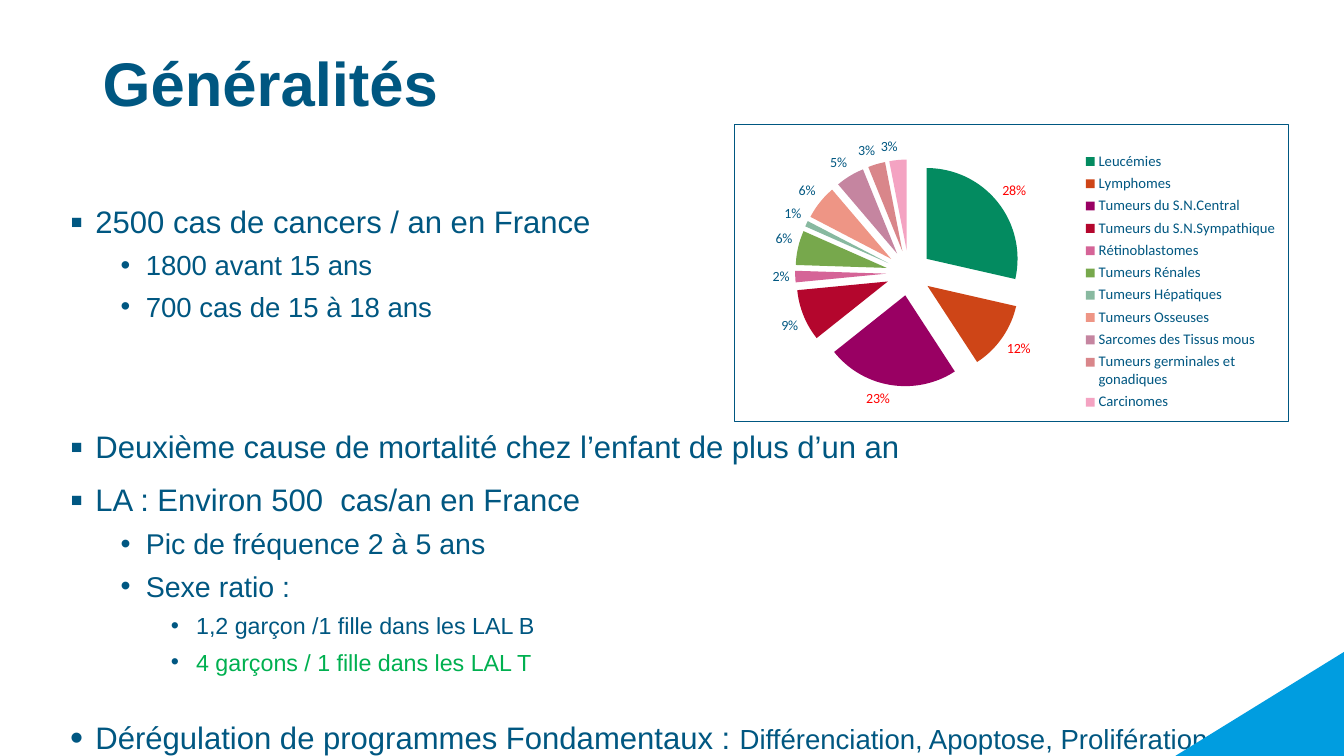
from lxml import etree
from pptx import Presentation
from pptx.chart.data import CategoryChartData
from pptx.dml.color import RGBColor
from pptx.enum.chart import XL_CHART_TYPE, XL_LABEL_POSITION, XL_LEGEND_POSITION
from pptx.enum.shapes import MSO_SHAPE
from pptx.enum.text import MSO_ANCHOR
from pptx.oxml import parse_xml
from pptx.oxml.ns import nsdecls, qn
from pptx.util import Cm, Pt

PIE = XL_CHART_TYPE.PIE_EXPLODED
OUTSIDE = XL_LABEL_POSITION.OUTSIDE_END
RIGHT = XL_LEGEND_POSITION.RIGHT
TRIANGLE = MSO_SHAPE.RIGHT_TRIANGLE
MIDDLE = MSO_ANCHOR.MIDDLE

COLORS = {"navy": "005781", "bullet": "005782", "green": "00B050",
          "sky": "009DE0", "red": "FF0000", "white": "FFFFFF"}

# Tumour type, share, slice colour
TUMOURS = [
    ("Leucémies", 0.28, "038B60"),
    ("Lymphomes", 0.12, "CE4517"),
    ("Tumeurs du S.N.Central", 0.23, "990063"),
    ("Tumeurs du S.N.Sympathique", 0.09, "B4062D"),
    ("Rétinoblastomes", 0.02, "D56497"),
    ("Tumeurs Rénales", 0.06, "77A84C"),
    ("Tumeurs Hépatiques", 0.01, "88B9A0"),
    ("Tumeurs Osseuses", 0.06, "EE9585"),
    ("Sarcomes des Tissus mous", 0.05, "C585A0"),
    ("Tumeurs germinales et gonadiques", 0.03, "D9868A"),
    ("Carcinomes", 0.03, "F4A3C2"),
]

# Level, bullet, space before, line spacing, runs (text, size, colour)
BODY = [
    (0, "▪", 0, 1, [("2500 cas de cancers / an en France", 22.2, "navy")]),
    (1, "•", 6, 1, [("1800 avant 15 ans", 19.7, "navy")]),
    (1, "•", 6, 1, [("700 cas de 15 à 18 ans", 19.7, "navy")]),
    (0, "▪", 75, 1, [("Deuxième cause de mortalité chez l’enfant de plus d’un an", 22.2, "navy")]),
    (0, "▪", 11, 1, [("LA : Environ 500  cas/an en France", 22.2, "navy")]),
    (1, "•", 6, 1, [("Pic de fréquence 2 à 5 ans", 20.4, "navy")]),
    (1, "•", 6, 1, [("Sexe ratio :", 20.4, "navy")]),
    (2, "•", 6, 1, [("1,2 garçon /1 fille dans les LAL B", 16.6, "navy")]),
    (2, "•", 6, 1, [("4 garçons / 1 fille dans les LAL T", 16.6, "green")]),
    (0, "•", 28, 1.1, [("Dérégulation de programmes Fondamentaux : ", 22.2, "navy"),
                       ("Différenciation, Apoptose, Prolifération", 19.7, "navy")]),
]


def rgb(name):
    return RGBColor.from_string(COLORS.get(name, name))


class SlideBuilder:
    font = "Arial"
    chart_font = "Calibri"

    def __init__(self, prs):
        self.s = prs.slides.add_slide(prs.slide_layouts[6])
        self.s.background.fill.solid()
        self.s.background.fill.fore_color.rgb = rgb("white")

    def text_frame(self, *box):
        tf = self.s.shapes.add_textbox(*map(Cm, box)).text_frame
        tf.word_wrap = True
        return tf

    def run(self, p, text, size, color, bold=False):
        r = p.add_run()
        r.text = text
        r.font.name, r.font.size, r.font.bold = self.font, Pt(size), bold
        r.font.color.rgb = rgb(color)

    def title(self, text, *box):
        tf = self.text_frame(*box)
        tf.vertical_anchor = MIDDLE
        p = tf.paragraphs[0]
        p.line_spacing = 0.9
        self.run(p, text, 44, "navy", bold=True)

    def bullet(self, p, level, char):
        pPr = p._p.get_or_add_pPr()
        indent = Cm(0.635)
        pPr.set("marL", str(indent * (1 + 2 * level)))
        pPr.set("indent", str(-indent))
        clr = etree.SubElement(pPr, qn("a:buClr"))
        etree.SubElement(clr, qn("a:srgbClr"), val=COLORS["bullet"])
        if level == 0:
            etree.SubElement(pPr, qn("a:buSzPct"), val="120000")
        etree.SubElement(pPr, qn("a:buFont"), typeface=self.font)
        etree.SubElement(pPr, qn("a:buChar"), char=char)

    def bullets(self, items, *box):
        tf = self.text_frame(*box)
        for i, (level, char, before, spacing, runs) in enumerate(items):
            p = tf.add_paragraph() if i else tf.paragraphs[0]
            p.level = level
            self.bullet(p, level, char)
            p.space_before, p.line_spacing = Pt(before), spacing
            for text, size, color in runs:
                self.run(p, text, size, color)

    def corner(self, color, *box):
        sp = self.s.shapes.add_shape(TRIANGLE, *map(Cm, box))
        sp.shadow.inherit = False
        sp.fill.solid()
        sp.fill.fore_color.rgb = rgb(color)
        sp.line.fill.background()
        sp._element.spPr.find(qn("a:xfrm")).set("flipH", "1")

    def label_style(self, font, size, color):
        font.name, font.size = self.chart_font, Pt(size)
        font.color.rgb = rgb(color)

    def layout(self, x, y, w, h, target=""):
        sizes = "".join(f'<c:{k} val="{v}"/>' for k, v in zip("xywh", (x, y, w, h)))
        return parse_xml(f'<c:layout {nsdecls("c")}><c:manualLayout>{target}'
                         '<c:xMode val="edge"/><c:yMode val="edge"/>'
                         f'{sizes}</c:manualLayout></c:layout>')

    def pie(self, rows, highlighted, *box):
        data = CategoryChartData(number_format="0%")
        data.categories = [name for name, _, _ in rows]
        data.add_series("Series 1", [share for _, share, _ in rows])
        chart = self.s.shapes.add_chart(PIE, *map(Cm, box), data).chart
        self.label_style(chart.font, 10, "navy")
        chart.has_title = False

        # Legend
        chart.has_legend = True
        legend = chart.legend
        legend.position, legend.include_in_layout = RIGHT, False
        self.label_style(legend.font, 10.5, "navy")

        # Slices and labels
        plot = chart.plots[0]
        plot.vary_by_categories = True
        series = plot.series[0]
        labels = series.data_labels
        labels.show_value, labels.position = True, OUTSIDE
        labels.number_format, labels.number_format_is_linked = "0%", False
        self.label_style(labels.font, 10, "navy")
        for i, (_, _, color) in enumerate(rows):
            point = series.points[i]
            point.format.fill.solid()
            point.format.fill.fore_color.rgb = rgb(color)
            if i < highlighted:
                self.label_style(point.data_label.font, 10, "red")
                point.data_label.position = OUTSIDE
        ser = series._element
        for old in ser.findall(qn("c:explosion")):
            ser.remove(old)
        ser.find(qn("c:dPt")).addprevious(
            parse_xml(f'<c:explosion {nsdecls("c")} val="25"/>'))

        # Placement and frame
        space = chart._chartSpace
        area = space.find(".//" + qn("c:plotArea"))
        for old in area.findall(qn("c:layout")):
            area.remove(old)
        area.insert(0, self.layout(0.11, 0.115, 0.41, 0.77, '<c:layoutTarget val="inner"/>'))
        key = space.find(".//" + qn("c:legend"))
        for old in key.findall(qn("c:layout")):
            key.remove(old)
        key.find(qn("c:legendPos")).addnext(self.layout(0.62, 0.08, 0.37, 0.9))
        space.find(qn("c:chart")).addnext(parse_xml(
            f'<c:spPr {nsdecls("c", "a")}><a:noFill/><a:ln w="9525"><a:solidFill>'
            f'<a:srgbClr val="{COLORS["navy"]}"/></a:solidFill></a:ln></c:spPr>'))


def main():
    prs = Presentation()
    prs.slide_width, prs.slide_height = Cm(33.87), Cm(19.05)
    slide = SlideBuilder(prs)
    slide.title("Généralités", 2.34, 1.02, 29.21, 2.34)
    slide.bullets(BODY, 1.52, 4.98, 30.48, 14.07)
    slide.corner("sky", 29.62, 16.43, 4.25, 2.62)
    slide.pie(TUMOURS, 3, 18.49, 3.12, 14, 7.52)
    prs.save("out.pptx")


if __name__ == "__main__":
    main()
